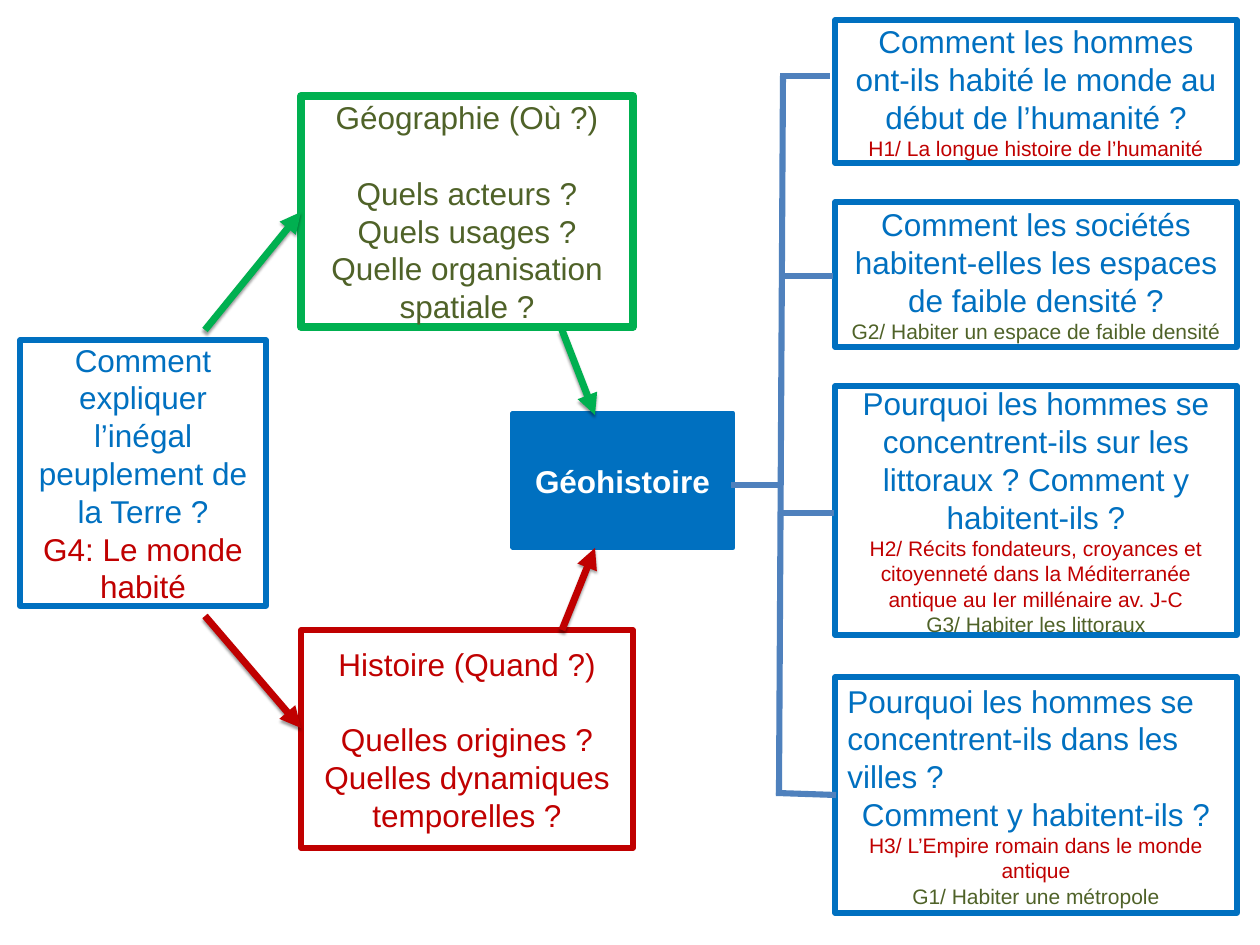
from lxml import etree
from pptx import Presentation
from pptx.dml.color import RGBColor
from pptx.enum.shapes import MSO_CONNECTOR, MSO_SHAPE
from pptx.enum.text import MSO_ANCHOR, PP_ALIGN
from pptx.oxml.ns import qn
from pptx.util import Pt

RECTANGLE, STRAIGHT = MSO_SHAPE.RECTANGLE, MSO_CONNECTOR.STRAIGHT
CENTER, LEFT, MIDDLE = PP_ALIGN.CENTER, PP_ALIGN.LEFT, MSO_ANCHOR.MIDDLE
EMU_PER_PX = 914400 / 126
COLORS = {"blue": "0070C0", "green": "00B050", "olive": "4F6228",
          "red": "C00000", "steel": "4F81BD", "white": "FFFFFF"}


def px(length):
    return round(length * EMU_PER_PX)


def color(name):
    return RGBColor.from_string(COLORS[name])


class Diagram:
    def __init__(self, slide, font="Arial"):
        self.slide = slide
        self.font = font

    def set_line(self, shape, name, width):
        shape.line.color.rgb = color(name)
        shape.line.width = Pt(width)

    def box(self, bounds, line, width, paragraphs, fill=None):
        """Each paragraph is (text, size, color, optional formats)."""
        shape = self.slide.shapes.add_shape(RECTANGLE, *map(px, bounds))
        shape.shadow.inherit = False
        if fill:
            shape.fill.solid()
            shape.fill.fore_color.rgb = color(fill)
        else:
            shape.fill.background()
        self.set_line(shape, line, width)
        frame = shape.text_frame
        frame.word_wrap = True
        frame.vertical_anchor = MIDDLE
        for index, (text, size, name, *formats) in enumerate(paragraphs):
            paragraph = frame.add_paragraph() if index else frame.paragraphs[0]
            for key, value in {"alignment": CENTER, **dict(*formats)}.items():
                setattr(paragraph, key, value)
            run = paragraph.add_run()
            run.text = text
            for key, value in {"name": self.font, "size": Pt(size), "bold": fill is not None}.items():
                setattr(run.font, key, value)
            run.font.color.rgb = color(name)

    def line(self, points, name="steel", width=3.5):
        connector = self.slide.shapes.add_connector(STRAIGHT, *map(px, points))
        self.set_line(connector, name, width)
        effects = etree.SubElement(connector._element.spPr, qn("a:effectLst"))
        return connector, effects

    def arrow(self, points, name):
        connector, effects = self.line(points, name, 4)
        outline = connector._element.spPr.find(qn("a:ln"))
        etree.SubElement(outline, qn("a:tailEnd"), type="triangle")
        shadow = etree.SubElement(effects, qn("a:outerShdw"), blurRad="20000",
                                  dist="20000", dir="5400000", rotWithShape="0")
        black = etree.SubElement(shadow, qn("a:srgbClr"), val="000000")
        etree.SubElement(black, qn("a:alpha"), val="38000")


def main():
    presentation = Presentation()
    presentation.slide_width, presentation.slide_height = px(1260), px(945)
    slide = presentation.slides.add_slide(presentation.slide_layouts[6])
    diagram = Diagram(slide)
    heading = {"space_after": Pt(21.6)}

    # Starting question
    diagram.box((20, 340, 246, 266), "blue", 3, [
        ("Comment expliquer l’inégal peuplement de la Terre ?", 18, "blue"),
        ("G4: Le monde habité", 18, "red")])

    # The two disciplines and their synthesis
    diagram.box((301, 96, 332, 231), "green", 4.5, [
        ("Géographie (Où ?)", 18, "olive", heading),
        ("Quels acteurs ? Quels usages ?", 18, "olive"),
        ("Quelle organisation spatiale ?", 18, "olive")])
    diagram.box((301, 630, 332, 218), "red", 3, [
        ("Histoire (Quand ?)", 18, "red", heading),
        ("Quelles origines ? Quelles dynamiques temporelles ?", 18, "red")])
    diagram.box((512, 413, 221, 135), "blue", 2,
                [("Géohistoire", 18, "white")], fill="blue")

    # Study themes: top, height, paragraphs
    themes = [
        (20, 143, [
            ("Comment les hommes ont-ils habité le monde au début de l’humanité ?", 18, "blue"),
            ("H1/ La longue histoire de l’humanité", 12, "red")]),
        (202, 145, [
            ("Comment les sociétés habitent-elles les espaces de faible densité ?", 18, "blue"),
            ("G2/ Habiter un espace de faible densité", 12, "olive")]),
        (386, 249, [
            ("Pourquoi les hommes se concentrent-ils sur les littoraux ? "
             "Comment y habitent-ils ?", 18, "blue"),
            ("H2/ Récits fondateurs, croyances et citoyenneté dans la Méditerranée "
             "antique au Ier millénaire av. J-C", 12, "red"),
            ("G3/ Habiter les littoraux", 12, "olive")]),
        (677, 236, [
            ("Pourquoi les hommes se concentrent-ils dans les villes ?", 18, "blue",
             {"alignment": LEFT}),
            ("Comment y habitent-ils ?", 18, "blue"),
            ("H3/ L’Empire romain dans le monde antique", 12, "red"),
            ("G1/ Habiter une métropole", 12, "olive")]),
    ]
    for top, height, paragraphs in themes:
        diagram.box((835, top, 402, height), "blue", 3, paragraphs)

    # Arrows through the disciplines
    for points, name in [((205, 330, 301, 212), "green"), ((205, 616, 301, 728), "red"),
                         ((562, 330, 595, 415), "green"), ((562, 630, 595, 548), "red")]:
        diagram.arrow(points, name)

    # Bracket: trunk, branches to the themes, stem from the synthesis
    for points in [(783, 76, 779, 795), (830, 76, 780, 76), (833, 276, 780, 276),
                   (834, 513, 780, 513), (836, 795, 776, 793), (780, 485, 731, 485)]:
        diagram.line(points)

    presentation.save("out.pptx")


if __name__ == "__main__":
    main()
